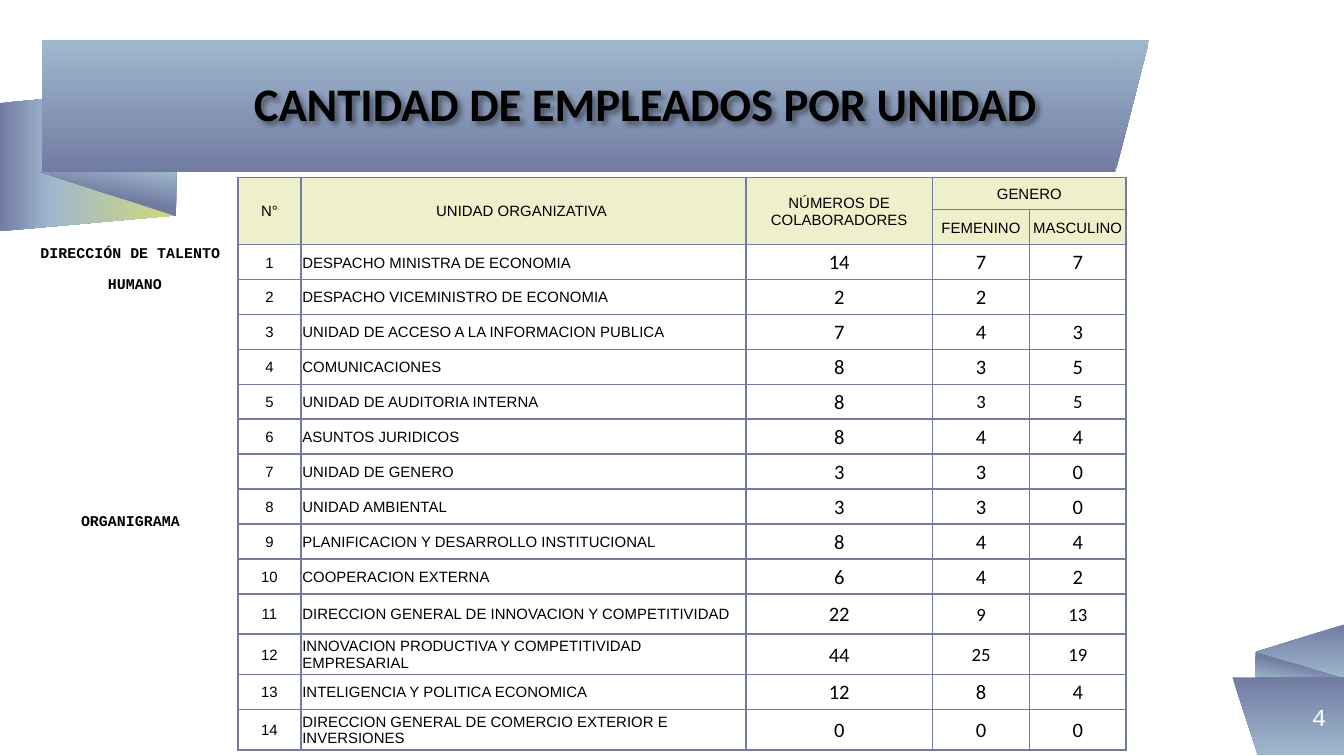
from lxml import etree
from pptx import Presentation
from pptx.dml.color import RGBColor
from pptx.enum import shapes, text
from pptx.oxml import parse_xml
from pptx.oxml.ns import nsdecls, qn
from pptx.util import Inches, Pt

BLACK = RGBColor(0, 0, 0)
WHITE = RGBColor(255, 255, 255)
PURPLE = RGBColor(0x72, 0x7C, 0xA3)
BLUE = RGBColor(0x9F, 0xB8, 0xCD)
LIME = RGBColor(0xD2, 0xDA, 0x7A)
CREAM = RGBColor(0xED, 0xF0, 0xCA)

LEFT, CENTER, RIGHT = (text.PP_ALIGN.LEFT, text.PP_ALIGN.CENTER, text.PP_ALIGN.RIGHT)
MIDDLE, TOP = text.MSO_ANCHOR.MIDDLE, text.MSO_ANCHOR.TOP
KIND = shapes.MSO_SHAPE

TWO_TONE = [(0, PURPLE), (100, BLUE)]
FOLD_TONE = [(0, PURPLE), (47, PURPLE), (100, BLUE)]
TAIL_TONE = [(0, PURPLE), (29, BLUE), (100, LIME)]

# kind, (left, top, width, height), rotation, flipped, adjustment, stops, gradient angle
RIBBONS = [
    (KIND.PARALLELOGRAM, (0.12, 0.53, 1.07, 1.31), 270, True, 0.11, TAIL_TONE, 90),
    (KIND.RIGHT_TRIANGLE, (0.3, 1.28, 1.01, 0.33), 180, False, None, FOLD_TONE, 100),
    (KIND.RECTANGLE, (0.31, 0.3, 7.99, 0.98), 180, True, None, TWO_TONE, 90),
    (KIND.ISOSCELES_TRIANGLE, (8.3, 0.3, 0.25, 0.98), 180, False, 1, TWO_TONE, 90),
    (KIND.ISOSCELES_TRIANGLE, (9.47, 4.52, 0.41, 0.66), 270, False, 0.5, TWO_TONE, 180),
    (KIND.RIGHT_TRIANGLE, (9.34, 4.85, 0.66, 0.2), 0, False, None, FOLD_TONE, 100),
    (KIND.RECTANGLE, (9.35, 5.04, 0.65, 0.58), 180, False, None, TWO_TONE, 270),
    (KIND.ISOSCELES_TRIANGLE, (9.17, 5.04, 0.19, 0.58), 180, True, 1, TWO_TONE, 270),
]

TITLE = "CANTIDAD DE EMPLEADOS POR UNIDAD"
SIDE_NOTES = [("DIRECCIÓN DE TALENTO ", 6), ("HUMANO", 6), ("ORGANIGRAMA ", 116)]
PAGE_NUMBER = "4"

HEADER = [
    ("N°", "UNIDAD ORGANIZATIVA ", "NÚMEROS DE COLABORADORES", "GENERO", ""),
    ("", "", "", "FEMENINO", "MASCULINO"),
]
UNITS = [
    ("DESPACHO MINISTRA DE ECONOMIA", 14, 7, 7),
    ("DESPACHO VICEMINISTRO DE ECONOMIA", 2, 2, ""),
    ("UNIDAD DE ACCESO A LA INFORMACION PUBLICA", 7, 4, 3),
    ("COMUNICACIONES", 8, 3, 5),
    ("UNIDAD DE AUDITORIA INTERNA", 8, 3, 5),
    ("ASUNTOS JURIDICOS", 8, 4, 4),
    ("UNIDAD DE GENERO", 3, 3, 0),
    ("UNIDAD AMBIENTAL", 3, 3, 0),
    ("PLANIFICACION Y DESARROLLO INSTITUCIONAL", 8, 4, 4),
    ("COOPERACION EXTERNA", 6, 4, 2),
    ("DIRECCION GENERAL DE INNOVACION Y COMPETITIVIDAD", 22, 9, 13),
    ("INNOVACION PRODUCTIVA Y COMPETITIVIDAD EMPRESARIAL", 44, 25, 19),
    ("INTELIGENCIA Y POLITICA ECONOMICA", 12, 8, 4),
    ("DIRECCION GENERAL DE COMERCIO EXTERIOR E INVERSIONES", 0, 0, 0),
]
SMALLER_GENDER = {5, 11, 12}
TALL_UNITS = {11, 12, 14}
COLUMN_WIDTHS = [0.47, 3.31, 1.39, 0.72, 0.72]
MERGES = [((0, 0), (1, 0)), ((0, 1), (1, 1)), ((0, 2), (1, 2)), ((0, 3), (0, 4))]


def apply(target, **values):
    for name, value in values.items():
        setattr(target, name, value)


def place(shape, left, top, width, height):
    apply(shape, left=Inches(left), top=Inches(top),
          width=Inches(width), height=Inches(height))


def write(para, words, size, font, color=BLACK, bold=False, align=CENTER):
    para.alignment = align
    span = para.add_run()
    span.text = words
    apply(span.font, size=Pt(size), name=font, bold=bold)
    span.font.color.rgb = color


def set_frame(frame, anchor):
    apply(frame, word_wrap=True, auto_size=text.MSO_AUTO_SIZE.NONE,
          vertical_anchor=anchor, margin_left=0, margin_right=0,
          margin_top=0, margin_bottom=0)


def add_ribbon(page, kind, spot, rotation, flipped, adjustment, stops, angle):
    ribbon = page.shapes.add_shape(kind, *map(Inches, spot))
    ribbon.rotation = rotation
    ribbon.shadow.inherit = False
    ribbon.line.fill.background()
    if adjustment is not None:
        ribbon.adjustments[0] = adjustment
    properties = ribbon.element.spPr
    if flipped:
        properties.find(qn("a:xfrm")).set("flipH", "1")
    marks = "".join(f'<a:gs pos="{stop * 1000}"><a:srgbClr val="{color}"/></a:gs>'
                    for stop, color in stops)
    properties.find(qn("a:prstGeom")).addnext(parse_xml(
        f'<a:gradFill {nsdecls("a")} rotWithShape="1"><a:gsLst>{marks}</a:gsLst>'
        f'<a:lin ang="{angle * 60000}" scaled="0"/></a:gradFill>'))


def add_title(page):
    title = page.shapes.title
    place(title, 1.06, 0.3, 7.48, 0.98)
    title.element.getparent().append(title.element)  # in front of the ribbons
    title.fill.background()
    title.element.spPr.append(parse_xml(
        f'<a:effectLst {nsdecls("a")}><a:outerShdw blurRad="38100" dist="25400" dir="2700000">'
        '<a:srgbClr val="000000"><a:alpha val="43000"/></a:srgbClr>'
        '</a:outerShdw></a:effectLst>'))
    set_frame(title.text_frame, MIDDLE)
    para = title.text_frame.paragraphs[0]
    para.line_spacing = 0.9
    write(para, TITLE, 25, "Calibri", bold=True)


def add_box(page, spot, anchor):
    box = page.shapes.add_textbox(*map(Inches, spot))
    set_frame(box.text_frame, anchor)
    return box.text_frame


def add_side_notes(page):
    frame = add_box(page, (0, 1.79, 1.93, 1.1), TOP)
    for index, (words, gap) in enumerate(SIDE_NOTES):
        para = frame.add_paragraph() if index else frame.paragraphs[0]
        apply(para, space_before=Pt(gap), line_spacing=1.15)
        para._p.get_or_add_pPr().set("marL", str(Inches(0.08)))
        write(para, words, 8, "Courier New", bold=True)


def fill_cell(cell, words, size, font, align, fill):
    apply(cell, vertical_anchor=MIDDLE, margin_left=Inches(0.01),
          margin_right=Inches(0.01), margin_top=Inches(0.01), margin_bottom=0)
    properties = cell._tc.get_or_add_tcPr()
    for side in ("lnL", "lnR", "lnT", "lnB"):
        properties.append(parse_xml(
            f'<a:{side} {nsdecls("a")} w="{Pt(1)}"><a:solidFill>'
            f'<a:srgbClr val="{PURPLE}"/></a:solidFill></a:{side}>'))
    if fill:
        cell.fill.solid()
        cell.fill.fore_color.rgb = fill
    else:
        cell.fill.background()
    para = cell.text_frame.paragraphs[0]
    if words:
        write(para, words, size, font, align=align)
    else:
        etree.SubElement(para._p, qn("a:endParaRPr"), sz=str(size * 100))


def add_staff_table(page):
    heights = [0.24, 0.26] + [0.3 if number in TALL_UNITS else 0.26
                              for number in range(1, len(UNITS) + 1)]
    rows = HEADER + [(number, *unit) for number, unit in enumerate(UNITS, 1)]
    table = page.shapes.add_table(
        len(rows), len(COLUMN_WIDTHS), Inches(1.77), Inches(1.32),
        Inches(sum(COLUMN_WIDTHS)), Inches(sum(heights))).table
    apply(table, first_row=False, horz_banding=False)
    for column, width in zip(table.columns, COLUMN_WIDTHS):
        column.width = Inches(width)
    for r, (values, height) in enumerate(zip(rows, heights)):
        table.rows[r].height = Inches(height)
        is_header = r < len(HEADER)
        for c, value in enumerate(values):
            size, font = (8, "Arial") if is_header or c < 2 else (11, "Calibri")
            if not is_header and c > 2 and values[0] in SMALLER_GENDER:
                size = 10
            align = LEFT if c == 1 and not is_header else CENTER
            fill_cell(table.cell(r, c), str(value), size, font, align,
                      CREAM if is_header else None)
    for first, last in MERGES:
        table.cell(*first).merge(table.cell(*last))


def main():
    deck = Presentation()
    apply(deck, slide_width=Inches(10), slide_height=Inches(10 * 9 / 16))
    page = deck.slides.add_slide(deck.slide_layouts[5])
    for ribbon in RIBBONS:
        add_ribbon(page, *ribbon)
    add_title(page)
    number = add_box(page, (9.34, 5.04, 0.53, 0.58), MIDDLE)
    write(number.paragraphs[0], PAGE_NUMBER, 13, "Courier New", WHITE, align=RIGHT)
    add_side_notes(page)
    add_staff_table(page)
    deck.save("out.pptx")


if __name__ == "__main__":
    main()
